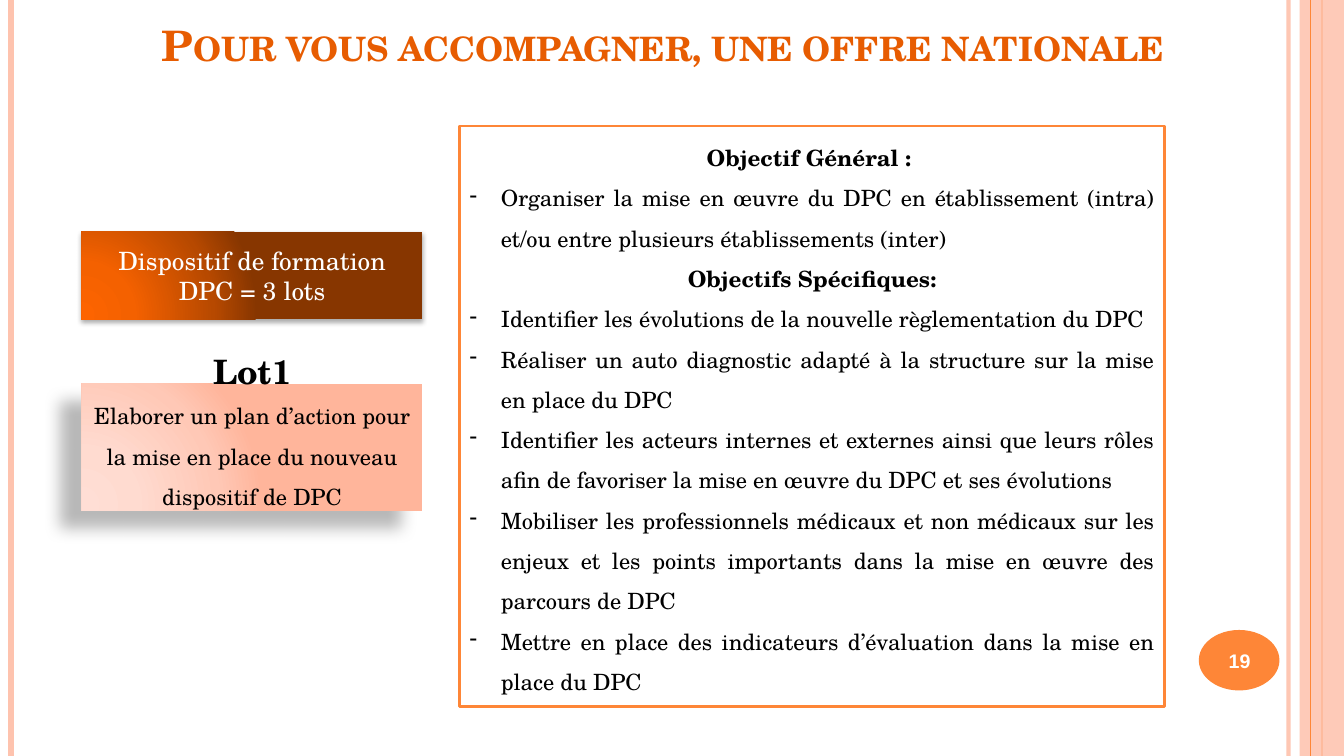
from dataclasses import dataclass
from typing import Optional

from lxml import etree
from pptx import Presentation
from pptx.dml.color import RGBColor
from pptx.enum.shapes import MSO_CONNECTOR, MSO_SHAPE
from pptx.enum.text import MSO_ANCHOR as Anchor, MSO_AUTO_SIZE as AutoSize, PP_ALIGN as Align
from pptx.oxml import parse_xml
from pptx.oxml.ns import nsdecls, qn
from pptx.util import Inches, Pt

COLORS = {
    "white": "FFFFFF",
    "black": "000000",
    "orange": "FE8637",
    "title": "E75C01",
    "peach": "FEC3AE",
}
SERIF = "TeX Gyre Schola"
HEIGHT = 7.5


@dataclass(frozen=True)
class Rule:
    x: float
    color: str
    width: float
    alpha: int = 100


@dataclass(frozen=True)
class Item:
    text: str
    size: float = 16
    color: str = "black"
    bold: bool = False
    font: str = SERIF
    spacing: float = 1.0
    dash: bool = False
    small_caps: bool = False


@dataclass(frozen=True)
class Shadow:
    alpha: int
    blur: float
    distance: float
    angle: int


@dataclass(frozen=True)
class Panel:
    top: float
    height: float
    shades: tuple
    shadow: Shadow
    item: Item
    anchor: Anchor
    size_mode: AutoSize


RULES = [
    Rule(12.78, "peach", 3, 93),
    Rule(0.11, "peach", 4.5),
    Rule(13.11, "orange", 1.5),
    Rule(13, "orange", 0.75),
]
STOPS = (0, 30, 75, 100)
PANELS = [
    Panel(2.3, 0.87, ("FD6400", "F46100", "B74900", "873600"), Shadow(32, 3.5, 2.2, 90),
          Item("Dispositif de formation DPC = 3 lots", 18, "white"),
          Anchor.MIDDLE, AutoSize.NONE),
    Panel(3.81, 1.26, ("FFDED5", "FFDBD0", "FFC8B6", "FFB59B"), Shadow(28, 11.8, 19.7, 141),
          Item("Elaborer un plan d’action pour la mise en place du nouveau dispositif de DPC",
               spacing=1.5),
          Anchor.TOP, AutoSize.SHAPE_TO_FIT_TEXT),
]


def heading(text: str) -> Item:
    return Item(text, bold=True, spacing=1.5)


def goal(text: str) -> Item:
    return Item(text, spacing=1.5, dash=True)


OBJECTIVES = [
    heading("Objectif Général : "),
    goal("Organiser la mise en œuvre du DPC en établissement (intra) et/ou entre plusieurs "
         "établissements (inter)"),
    heading("Objectifs Spécifiques:"),
    goal("Identifier les évolutions de la nouvelle règlementation du DPC "),
    goal("Réaliser un auto diagnostic adapté à la structure sur la mise en place du DPC "),
    goal("Identifier les acteurs internes et externes ainsi que leurs rôles afin de favoriser "
         "la mise en œuvre du DPC et ses évolutions "),
    goal("Mobiliser les professionnels médicaux et non médicaux sur les enjeux et les points "
         "importants dans la mise en œuvre des parcours de DPC "),
    goal("Mettre en place des indicateurs d’évaluation dans la mise en place du DPC "),
]


def rgb(name: str) -> RGBColor:
    return RGBColor.from_string(COLORS[name])


def set_alpha(element, percent: int) -> None:
    color = next(element.iter(qn("a:srgbClr")))
    etree.SubElement(color, qn("a:alpha")).set("val", str(percent * 1000))


def write(shape, items: list, anchor: Anchor = Anchor.TOP,
          size_mode: AutoSize = AutoSize.NONE) -> None:
    frame = shape.text_frame
    frame.word_wrap = True
    frame.auto_size = size_mode
    frame.vertical_anchor = anchor
    for index, item in enumerate(items):
        para = frame.add_paragraph() if index else frame.paragraphs[0]
        para.text = item.text
        para.alignment = Align.JUSTIFY if item.dash else Align.CENTER
        para.line_spacing = item.spacing
        font = para.font
        font.name, font.size, font.bold = item.font, Pt(item.size), item.bold
        font.color.rgb = rgb(item.color)
        properties = para._p.get_or_add_pPr()
        if item.small_caps:
            properties.find(qn("a:defRPr")).set("cap", "small")
        if item.dash:
            properties.set("marL", str(Inches(0.31)))
            properties.set("indent", str(Inches(-0.31)))
            bullet = parse_xml(f'<a:buChar {nsdecls("a")} char="-"/>')
            properties.find(qn("a:defRPr")).addprevious(bullet)


def add_shape(slide, kind: MSO_SHAPE, place: tuple, fill: Optional[str] = None):
    shape = slide.shapes.add_shape(kind, *map(Inches, place))
    shape.shadow.inherit = False
    shape.line.fill.background()
    if fill:
        shape.fill.solid()
        shape.fill.fore_color.rgb = rgb(fill)
    return shape


def add_text(slide, place: tuple, item: Item, anchor: Anchor = Anchor.TOP,
             size_mode: AutoSize = AutoSize.NONE) -> None:
    box = slide.shapes.add_textbox(*map(Inches, place))
    write(box, [item], anchor, size_mode)


def add_rule(slide, rule: Rule):
    x = Inches(rule.x)
    line = slide.shapes.add_connector(MSO_CONNECTOR.STRAIGHT, x, 0, x, Inches(HEIGHT))
    line.line.color.rgb = rgb(rule.color)
    line.line.width = Pt(rule.width)
    if rule.alpha < 100:
        set_alpha(line._element.spPr, rule.alpha)
    etree.SubElement(line._element.spPr, qn("a:effectLst"))
    return line


def add_panel(slide, panel: Panel) -> None:
    box = add_shape(slide, MSO_SHAPE.RECTANGLE, (0.81, panel.top, 3.38, panel.height))
    box.fill.gradient()
    properties = box._element.spPr
    stops = "".join(f'<a:gs pos="{stop * 1000}"><a:srgbClr val="{shade}"/></a:gs>'
                    for stop, shade in zip(STOPS, panel.shades))
    gradient = parse_xml(
        f'<a:gradFill {nsdecls("a")} rotWithShape="1"><a:gsLst>{stops}</a:gsLst>'
        '<a:path path="circle"><a:fillToRect l="5000" t="100000" r="120000" b="10000"/>'
        '</a:path></a:gradFill>')
    properties.replace(properties.find(qn("a:gradFill")), gradient)
    shadow = panel.shadow
    properties.find(qn("a:effectLst")).append(parse_xml(
        f'<a:outerShdw {nsdecls("a")} blurRad="{Pt(shadow.blur)}" dist="{Pt(shadow.distance)}" '
        f'dir="{shadow.angle * 60000}" algn="ctr" rotWithShape="0">'
        f'<a:srgbClr val="{COLORS["black"]}"><a:alpha val="{shadow.alpha * 1000}"/></a:srgbClr>'
        '</a:outerShdw>'))
    write(box, [panel.item], panel.anchor, panel.size_mode)


def main() -> None:
    deck = Presentation()
    deck.slide_width, deck.slide_height = Inches(13.33), Inches(HEIGHT)
    slide = deck.slides.add_slide(deck.slide_layouts[6])

    *_, band_axis = [add_rule(slide, rule) for rule in RULES[:3]]
    band = add_shape(slide, MSO_SHAPE.RECTANGLE, (12.89, 0, 0.44, HEIGHT), "peach")
    set_alpha(band._element.spPr, 87)
    band_axis.begin_connect(band, 0)
    band_axis.end_connect(band, 2)
    add_rule(slide, RULES[3])
    add_shape(slide, MSO_SHAPE.OVAL, (11.89, 6.25, 0.8, 0.6), "orange")

    add_text(slide, (1.13, 0.17, 10.89, 0.57),
             Item("Pour vous accompagner, une offre nationale", 30, "title", True,
                  small_caps=True), Anchor.BOTTOM)
    add_text(slide, (11.85, 6.27, 0.89, 0.57), Item("19", 14, "white", True, "Arial"),
             Anchor.MIDDLE)
    for panel in PANELS:
        add_panel(slide, panel)
    add_text(slide, (1.91, 3.43, 1.19, 0.5), Item("Lot1", 24, bold=True),
             size_mode=AutoSize.SHAPE_TO_FIT_TEXT)

    objectives = add_shape(slide, MSO_SHAPE.RECTANGLE, (4.56, 1.25, 6.99, 5.76), "white")
    objectives.line.color.rgb = rgb("orange")
    objectives.line.width = Pt(2)
    write(objectives, OBJECTIVES, size_mode=AutoSize.SHAPE_TO_FIT_TEXT)
    deck.save("out.pptx")


if __name__ == "__main__":
    main()
